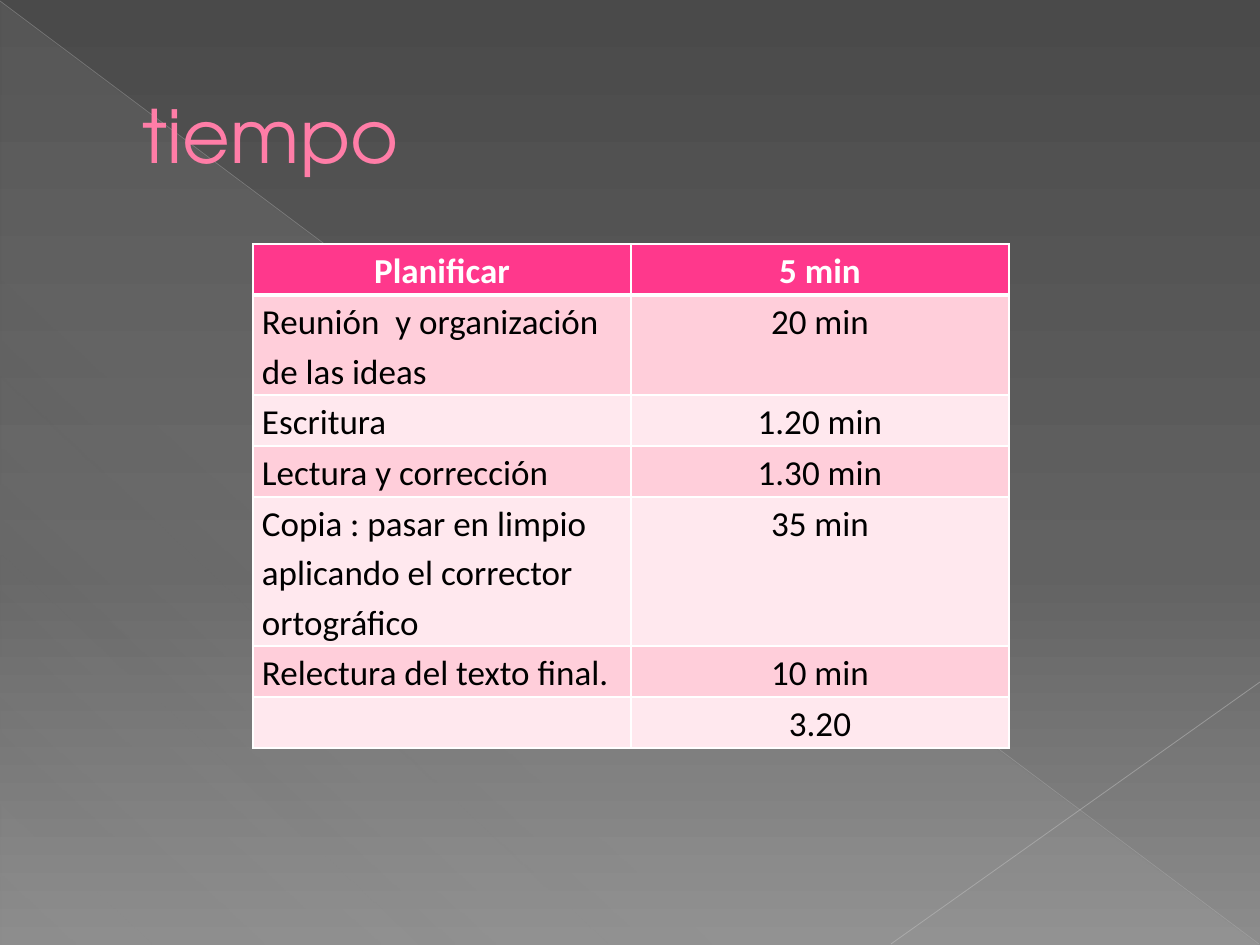
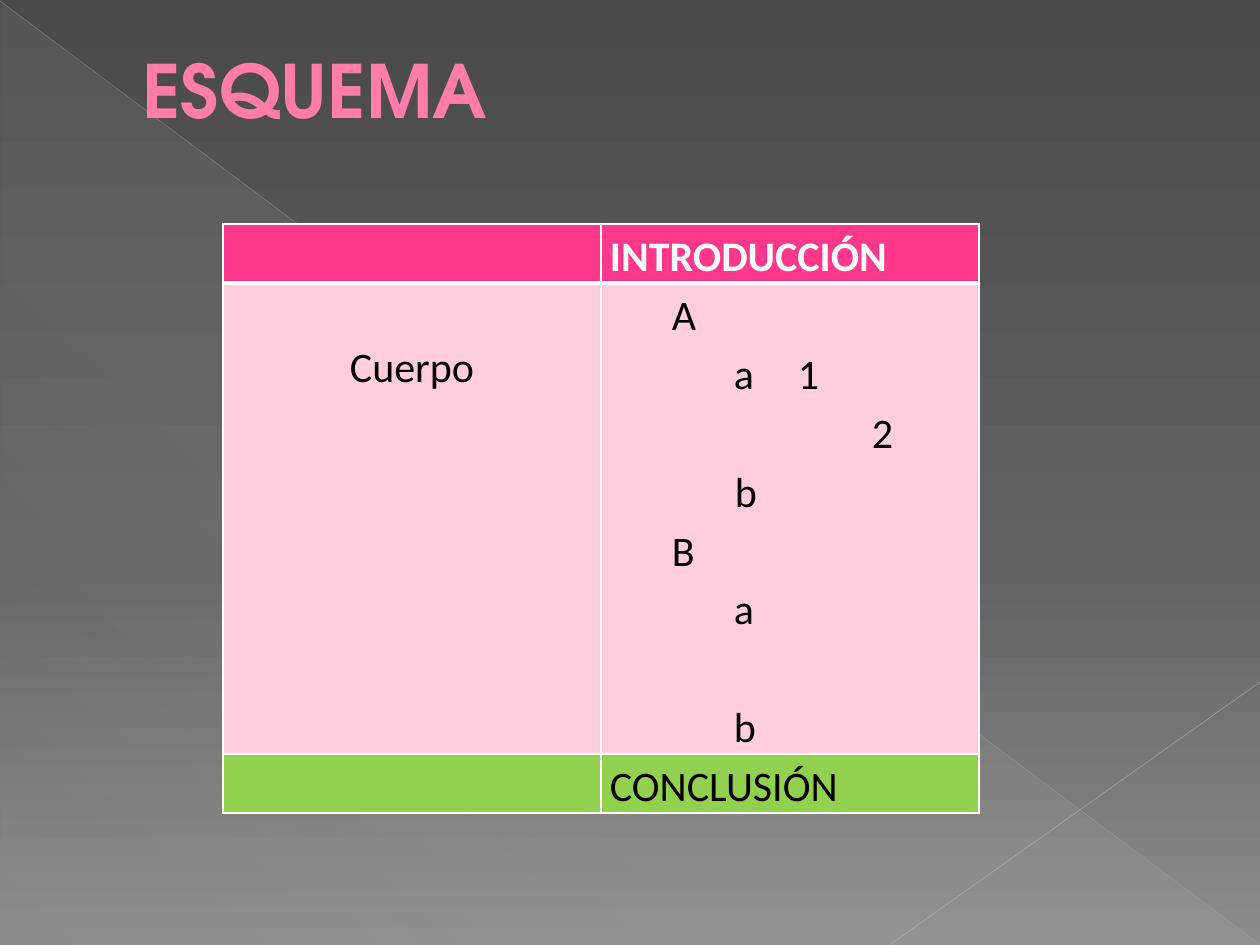
from dataclasses import dataclass
from typing import Any

import lxml.etree
import pptx
import pptx.dml.color
import pptx.enum.shapes
import pptx.enum.text
import pptx.oxml
import pptx.oxml.ns
import pptx.util

HUES = {
    "dark": "4A4A4A", "mid": "626262", "light": "8C8C8C",
    "veil": "D2D2D2", "fall": "BFBFBF", "rise": "C6C6C6",
    "title": "FF7DA7", "edge": "B12761",
    "head": "FF388C", "rose": "FFCEDA", "pale": "FFE8EE", "green": "92D050",
    "white": "FFFFFF", "black": "000000",
}
WIDE, HIGH = 1260, 945
LEFT = pptx.enum.text.PP_ALIGN.LEFT
MID = pptx.enum.text.PP_ALIGN.CENTER
qn = pptx.oxml.ns.qn


@dataclass
class Stripe:
    start: tuple[int, int]
    end: tuple[int, int]
    hue: str
    width: float
    alpha: int


@dataclass
class Line:
    text: str
    left: int = 0
    first: int = 0
    above: int = 0
    align: Any = LEFT


@dataclass
class Cell:
    lines: list[Line]
    top: int = 0


@dataclass
class Row:
    high: int
    hue: str
    cells: list[Cell]


@dataclass
class Grid:
    left: int
    top: int
    size: int
    rows: list[Row]


STRIPES = [
    Stripe((0, 1), (1259, 944), "fall", 0.39, 35),
    Stripe((1260, 682), (891, 944), "rise", 0.47, 45),
]


def px(count: int) -> pptx.util.Emu:
    return pptx.util.Emu(round(count * 914400 / 126))


def rgb(hue: str) -> pptx.dml.color.RGBColor:
    return pptx.dml.color.RGBColor.from_string(HUES[hue])


def put(item: Any, look: dict[str, Any]) -> None:
    for name, value in look.items():
        setattr(item, name, value)


def ink(run: Any, face: str, size: int, hue: str, bold: bool) -> None:
    put(run.font, {"name": face, "size": pptx.util.Pt(size), "bold": bold})
    run.font.color.rgb = rgb(hue)


def blend(props: Any, stops: list[tuple[int, str, int]], angle: int) -> None:
    """Swap a solid fill for a gradient of (place, hue, alpha) stops."""
    marks = "".join(
        f'<a:gs pos="{place * 1000}"><a:srgbClr val="{HUES[hue]}">'
        f'<a:alpha val="{alpha * 1000}"/></a:srgbClr></a:gs>'
        for place, hue, alpha in stops)
    fill = pptx.oxml.parse_xml(
        f'<a:gradFill {pptx.oxml.ns.nsdecls("a")}><a:gsLst>{marks}</a:gsLst>'
        f'<a:lin ang="{angle * 60000}" scaled="0"/></a:gradFill>')
    props.replace(props.find(qn("a:solidFill")), fill)


def stroke(tag: str, hue: str, width: float) -> Any:
    return pptx.oxml.parse_xml(
        f'<a:{tag} {pptx.oxml.ns.nsdecls("a")} w="{round(width * 12700)}">'
        f'<a:solidFill><a:srgbClr val="{HUES[hue]}"/></a:solidFill></a:{tag}>')


# Shared look
def paint(deck: Any) -> None:
    master = deck.slide_master
    master.background.fill.solid()
    blend(master.element.xpath(".//p:bgPr")[0],
          [(0, "dark", 100), (60, "mid", 100), (100, "light", 100)], 90)


def dress(slide: Any) -> None:
    veil = slide.shapes.add_shape(
        pptx.enum.shapes.MSO_SHAPE.RIGHT_TRIANGLE,
        px(1), px(2), px(WIDE - 2), px(HIGH - 2))
    veil.shadow.inherit = False
    veil.line.fill.background()
    veil.fill.solid()
    blend(veil.element.spPr,
          [(0, "veil", 10), (70, "veil", 8), (100, "veil", 1)], 133)
    for band in STRIPES:
        line = slide.shapes.add_connector(
            pptx.enum.shapes.MSO_CONNECTOR.STRAIGHT,
            *map(px, band.start + band.end))
        put(line.line, {"width": pptx.util.Pt(band.width)})
        line.line.color.rgb = rgb(band.hue)
        props = line.element.spPr
        tint = props.xpath(".//a:srgbClr")[0]
        lxml.etree.SubElement(tint, qn("a:alpha"), val=str(band.alpha * 1000))
        lxml.etree.SubElement(props, qn("a:effectLst"))


def head(slide: Any, text: str, bold: bool, base: int) -> None:
    title = slide.shapes.title
    put(title, {"left": px(63), "top": px(37),
                "width": px(1134), "height": px(193)})
    put(title.text_frame, {
        "text": text, "word_wrap": True, "margin_bottom": px(base),
        "auto_size": pptx.enum.text.MSO_AUTO_SIZE.NONE,
        "vertical_anchor": pptx.enum.text.MSO_ANCHOR.MIDDLE})
    para = title.text_frame.paragraphs[0]
    para.alignment = LEFT
    para._p.get_or_add_pPr().set("marL", str(px(67)))
    run = para.runs[0]
    ink(run, "TeX Gyre Adventor", 42, "title", bold)
    run._r.get_or_add_rPr().insert(0, stroke("ln", "edge", 0.5))
    slide.shapes._spTree.append(title.element)


# Tables
def fill(cell: Any, data: Cell, size: int, first: bool) -> None:
    put(cell, {"margin_left": px(9), "margin_right": px(9),
               "margin_top": px(data.top), "margin_bottom": 0})
    for spot, line in enumerate(data.lines):
        frame = cell.text_frame
        para = frame.paragraphs[0] if spot == 0 else frame.add_paragraph()
        put(para, {"alignment": line.align, "line_spacing": 1.15,
                   "space_before": px(line.above)})
        props = para._p.get_or_add_pPr()
        props.set("marL", str(px(line.left)))
        props.set("indent", str(px(line.first)))
        run = para.add_run()
        run.text = line.text
        ink(run, "Calibri", size, "white" if first else "black", first)


def draw(slide: Any, grid: Grid) -> None:
    table = slide.shapes.add_table(
        len(grid.rows), 2, px(grid.left), px(grid.top), px(756),
        px(sum(row.high for row in grid.rows))).table
    for spot, row in enumerate(grid.rows):
        table.rows[spot].height = px(row.high)
        for col, data in enumerate(row.cells):
            cell = table.cell(spot, col)
            fill(cell, data, grid.size, spot == 0)
            cell.fill.solid()
            cell.fill.fore_color.rgb = rgb(row.hue)
            sides = {"lnL": 1, "lnR": 1, "lnT": 3 if spot == 1 else 1,
                     "lnB": 3 if spot == 0 else 1}
            for place, (tag, width) in enumerate(sides.items()):
                cell._tc.get_or_add_tcPr().insert(
                    place, stroke(tag, "white", width))


def cell(text: str, align: Any = LEFT, top: int = 0) -> Cell:
    return Cell([Line(text, align=align)] if text else [], top)


# Content
TIMES = [
    ("Planificar", "5 min", 1),
    ("Reunión  y organización de las ideas", "20 min", 2),
    ("Escritura", "1.20 min", 1),
    ("Lectura y corrección", "1.30 min", 1),
    ("Copia : pasar en limpio aplicando el corrector ortográfico",
     "35 min", 3),
    ("Relectura del texto final.", "10 min", 1),
    ("", "3.20", 1),
]
PLAN = Grid(253, 244, 20, [
    Row(2 + 49 * count,
        "head" if spot == 0 else ("pale", "rose")[spot % 2],
        [cell(task, LEFT if spot else MID), cell(time, MID)])
    for spot, (task, time, count) in enumerate(TIMES)])
TREE = [
    Line("A", 62), Line("a\t1", 62, 62), Line("2", 262), Line("b", 125),
    Line("B", 62), Line("a", 124), Line("b", 124, above=59),
]
SCHEME = Grid(223, 224, 24, [
    Row(59, "head", [cell(""), cell("INTRODUCCIÓN")]),
    Row(471, "rose", [cell("Cuerpo", MID, 52), Cell(TREE)]),
    Row(59, "green", [cell(""), cell("CONCLUSIÓN")]),
])


def main() -> None:
    deck = pptx.Presentation()
    put(deck, {"slide_width": px(WIDE), "slide_height": px(HIGH)})
    paint(deck)
    for text, bold, base, grid in [("tiempo", False, 6, PLAN),
                                   ("ESQUEMA", True, 96, SCHEME)]:
        slide = deck.slides.add_slide(deck.slide_layouts[5])
        dress(slide)
        head(slide, text, bold, base)
        draw(slide, grid)
    deck.save("out.pptx")


if __name__ == "__main__":
    main()
